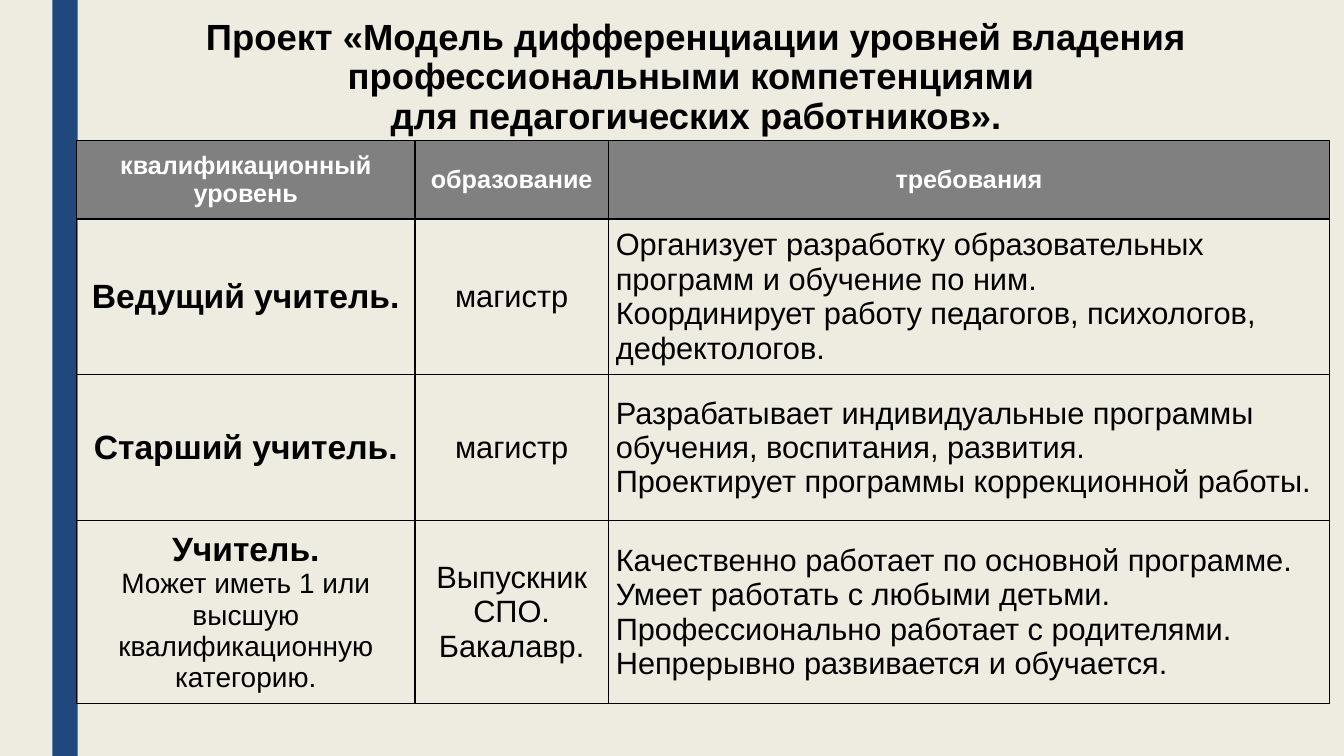
from lxml import etree
from pptx import Presentation
from pptx.dml.color import RGBColor
from pptx.enum.shapes import MSO_SHAPE as Shape
from pptx.enum.text import MSO_ANCHOR as Anchor, PP_ALIGN as Align
from pptx.oxml.ns import qn
from pptx.util import Cm, Pt

CREAM = RGBColor(0xEE, 0xEC, 0xE1)
NAVY = RGBColor(0x1F, 0x49, 0x7D)
GREY = RGBColor(0x80, 0x80, 0x80)
BLACK = RGBColor(0, 0, 0)
WHITE = RGBColor(0xFF, 0xFF, 0xFF)
FONT = "Arial"

TITLE = ("Проект «Модель дифференциации уровней владения "
         "профессиональными компетенциями \vдля педагогических работников».")
HEADERS = ["квалификационный уровень", "образование", "требования"]
# Each row: level, education, requirements; a line break starts a paragraph
LEVELS = [
    ("Ведущий учитель.", "магистр",
     "Организует разработку образовательных программ и обучение по ним.\n"
     "Координирует работу педагогов, психологов, дефектологов."),
    ("Старший учитель.", "магистр",
     "Разрабатывает индивидуальные программы обучения, воспитания, развития.\n"
     "Проектирует программы коррекционной работы."),
    ("Учитель.\nМожет иметь 1 или высшую квалификационную категорию.",
     "Выпускник СПО.\nБакалавр.",
     "Качественно работает по основной программе.\n"
     "Умеет работать с любыми детьми.\n"
     "Профессионально работает с родителями.\n"
     "Непрерывно развивается и обучается."),
]
COLUMN_WIDTHS = [Cm(8.53), Cm(4.87), Cm(18.18)]
ROW_HEIGHTS = [Cm(1.98), Cm(3.68), Cm(3.68), Cm(4.52)]


def format_paragraph(paragraph, size, bold=False, color=BLACK, align=Align.CENTER):
    paragraph.alignment = align
    for run in paragraph.runs:
        run.font.name = FONT
        run.font.size = Pt(size)
        run.font.bold = bold
        run.font.color.rgb = color


def add_side_bar(slide, left, top, width, height):
    bar = slide.shapes.add_shape(Shape.RECTANGLE, left, top, width, height)
    bar.shadow.inherit = False
    bar.fill.solid()
    bar.fill.fore_color.rgb = NAVY
    bar.line.fill.background()


def add_title(slide, left, top, width, height):
    text_frame = slide.shapes.add_textbox(left, top, width, height).text_frame
    text_frame.word_wrap = True
    text_frame.text = TITLE
    paragraph = text_frame.paragraphs[0]
    paragraph.line_spacing = 0.9
    format_paragraph(paragraph, 26, bold=True)


def add_borders(cell):
    properties = cell._tc.get_or_add_tcPr()
    for side in ("a:lnL", "a:lnR", "a:lnT", "a:lnB"):
        line = etree.SubElement(properties, qn(side), w=str(Pt(1)))
        fill = etree.SubElement(line, qn("a:solidFill"))
        etree.SubElement(fill, qn("a:srgbClr"), val=str(BLACK))


def fill_cell(cell, text, row, column):
    cell.text_frame.text = text
    cell.vertical_anchor = Anchor.MIDDLE
    cell.margin_left = cell.margin_right = Cm(0.19)
    cell.margin_top = cell.margin_bottom = Cm(0.1)
    add_borders(cell)
    if row == 0:
        cell.fill.solid()
        cell.fill.fore_color.rgb = GREY
    else:
        cell.fill.background()

    for index, paragraph in enumerate(cell.text_frame.paragraphs):
        if row == 0:
            format_paragraph(paragraph, 18, bold=True, color=WHITE)
        elif column == 0:
            format_paragraph(paragraph, 20 if index else 24, bold=index == 0)
        else:
            format_paragraph(paragraph, 22,
                             align=Align.CENTER if column == 1 else Align.LEFT)


def add_levels_table(slide, left, top):
    table = slide.shapes.add_table(
        len(ROW_HEIGHTS), len(COLUMN_WIDTHS), left, top,
        sum(COLUMN_WIDTHS), sum(ROW_HEIGHTS)).table
    table.first_row = False
    table.horz_banding = False
    for column, width in zip(table.columns, COLUMN_WIDTHS):
        column.width = width
    for row, height in zip(table.rows, ROW_HEIGHTS):
        row.height = height
    for row, texts in enumerate([HEADERS, *LEVELS]):
        for column, text in enumerate(texts):
            fill_cell(table.cell(row, column), text, row, column)


def main():
    presentation = Presentation()
    presentation.slide_width = Cm(33.87)
    presentation.slide_height = Cm(19.05)
    slide = presentation.slides.add_slide(presentation.slide_layouts[6])
    slide.background.fill.solid()
    slide.background.fill.fore_color.rgb = CREAM

    add_side_bar(slide, Cm(1.32), 0, Cm(0.64), presentation.slide_height)
    add_title(slide, Cm(1.93), Cm(0.36), Cm(31.24), Cm(4.27))
    add_levels_table(slide, Cm(1.93), Cm(3.54))
    presentation.save("out.pptx")


if __name__ == "__main__":
    main()
